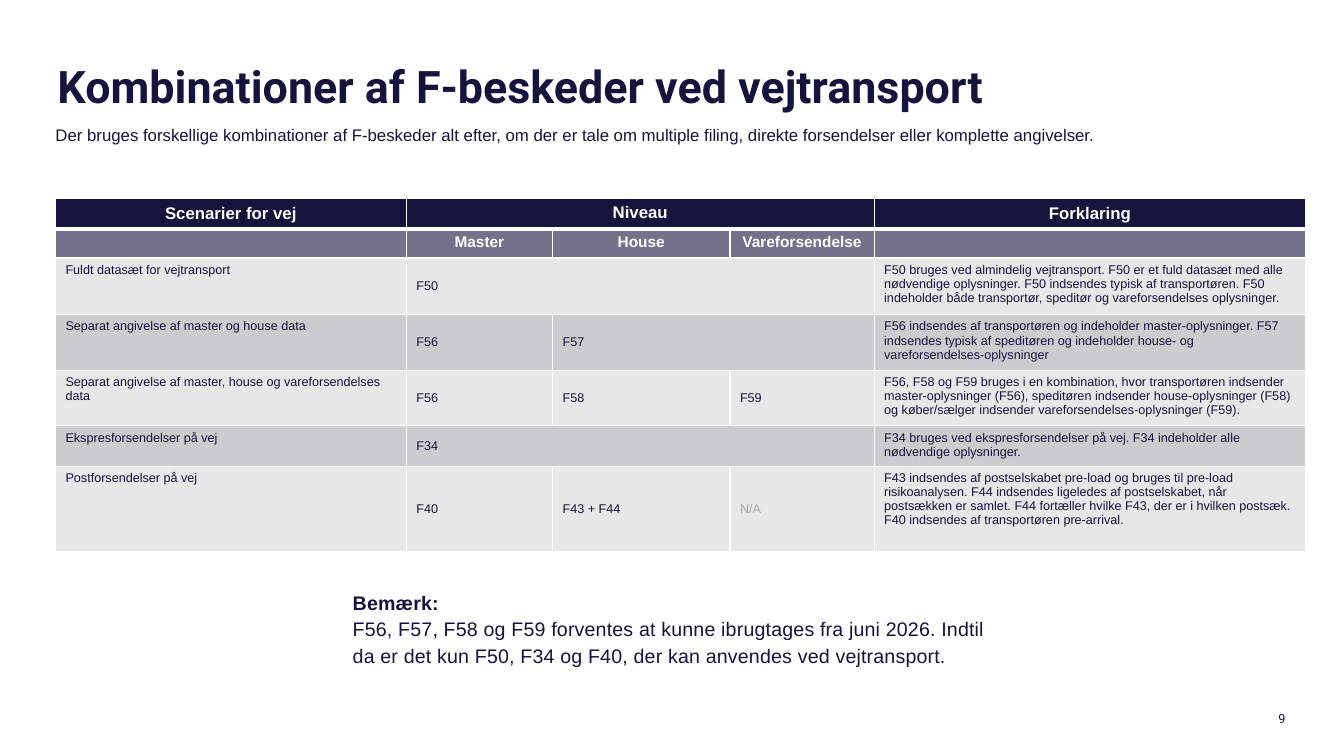
from dataclasses import dataclass

from lxml.etree import SubElement
from pptx import Presentation
from pptx.dml.color import RGBColor
from pptx.enum.text import MSO_ANCHOR, PP_ALIGN
from pptx.oxml import parse_xml
from pptx.oxml.ns import nsdecls, qn
from pptx.util import Inches, Pt

NAVY = RGBColor(0x14, 0x14, 0x3C)
SLATE = RGBColor(0x72, 0x72, 0x8A)
LIGHT = RGBColor(0xE7, 0xE7, 0xE8)
MID = RGBColor(0xCC, 0xCC, 0xCE)
GREY = RGBColor(0xA6, 0xA6, 0xA6)
WHITE = RGBColor(0xFF, 0xFF, 0xFF)

WIDTHS = (3.48, 1.45, 1.76, 1.43, 4.28)
LAST = len(WIDTHS) - 1


@dataclass
class Style:
    size: float
    color: RGBColor = NAVY
    bold: bool = False
    font: str = "Arial"
    align: PP_ALIGN = PP_ALIGN.LEFT
    lines: float = 1.0


@dataclass
class Row:
    """One table row; None continues the cell to its left."""
    height: float
    fill: RGBColor
    cells: tuple


HEAD = Style(12, WHITE, True, align=PP_ALIGN.CENTER)
SUBHEAD = Style(11, WHITE, True, align=PP_ALIGN.CENTER)
BODY = Style(9)
FAINT = Style(9, GREY)

ROWS = (
    Row(0.3, NAVY, ("Scenarier for vej", "Niveau", None, None, "Forklaring")),
    Row(0.29, SLATE, ("", "Master", "House", "Vareforsendelse", "")),
    Row(0.56, LIGHT, (
        "Fuldt datasæt for vejtransport", "F50", None, None,
        "F50 bruges ved almindelig vejtransport. F50 er et fuld datasæt med alle "
        "nødvendige oplysninger. F50 indsendes typisk af transportøren. F50 "
        "indeholder både transportør, speditør og vareforsendelses oplysninger.")),
    Row(0.55, MID, (
        "Separat angivelse af master og house data", "F56", "F57", None,
        "F56 indsendes af transportøren og indeholder master-oplysninger. F57 "
        "indsendes typisk af speditøren og indeholder house- og "
        "vareforsendelses-oplysninger")),
    Row(0.55, LIGHT, (
        "Separat angivelse af master, house og vareforsendelses data",
        "F56", "F58", "F59",
        "F56, F58 og F59 bruges i en kombination, hvor transportøren indsender "
        "master-oplysninger (F56), speditøren indsender house-oplysninger (F58) "
        "og køber/sælger indsender vareforsendelses-oplysninger (F59).")),
    Row(0.4, MID, (
        "Ekspresforsendelser på vej", "F34", None, None,
        "F34 bruges ved ekspresforsendelser på vej. F34 indeholder alle "
        "nødvendige oplysninger.")),
    Row(0.85, LIGHT, (
        "Postforsendelser på vej", "F40", "F43 + F44", "N/A",
        "F43 indsendes af postselskabet pre-load og bruges til pre-load "
        "risikoanalysen. F44 indsendes ligeledes af postselskabet, når "
        "postsækken er samlet. F44 fortæller hvilke F43, der er i hvilken "
        "postsæk. F40 indsendes af transportøren pre-arrival.")),
)


def write(para, text: str, style: Style):
    para.alignment = style.align
    para.line_spacing = style.lines
    run = para.add_run()
    run.text = text
    font = run.font
    font.name, font.size, font.bold = style.font, Pt(style.size), style.bold
    font.color.rgb = style.color
    return run


def place(shape, left: float, top: float, width: float, height: float) -> None:
    shape.left, shape.top = Inches(left), Inches(top)
    shape.width, shape.height = Inches(width), Inches(height)


def set_frame(frame, anchor=MSO_ANCHOR.TOP) -> None:
    """Wrap the text and drop the insets."""
    frame.word_wrap = True
    frame.vertical_anchor = anchor
    frame.margin_left = frame.margin_right = 0
    frame.margin_top = frame.margin_bottom = 0


def add_box(slide, left: float, top: float, width: float, height: float):
    return slide.shapes.add_textbox(
        Inches(left), Inches(top), Inches(width), Inches(height)).text_frame


def set_edges(cell, row: int) -> None:
    """Draw white borders, with a thick rule under the header row."""
    thick = {(0, "lnB"), (1, "lnT")}
    props = cell._tc.get_or_add_tcPr()
    for spot, tag in enumerate(("lnL", "lnR", "lnT", "lnB")):
        width = Pt(3 if (row, tag) in thick else 1)
        props.insert(spot, parse_xml(
            f'<a:{tag} {nsdecls("a")} w="{width}"><a:solidFill>'
            f'<a:srgbClr val="{WHITE}"/></a:solidFill></a:{tag}>'))


def pick_style(row: int, text: str) -> Style:
    if row < 2:
        return (HEAD, SUBHEAD)[row]
    return FAINT if text == "N/A" else BODY


def fill_cell(cell, row: int, col: int, text, fill: RGBColor) -> None:
    cell.fill.solid()
    cell.fill.fore_color.rgb = fill
    set_edges(cell, row)
    para = cell.text_frame.paragraphs[0]
    if not text:
        SubElement(para._p, qn("a:endParaRPr"), sz="900")
        return
    write(para, text, pick_style(row, text))
    outer = col in (0, LAST)
    middle = outer if row == 0 else row > 1 and not outer
    cell.vertical_anchor = MSO_ANCHOR.MIDDLE if middle else MSO_ANCHOR.TOP


def add_grid(slide) -> None:
    table = slide.shapes.add_table(
        len(ROWS), len(WIDTHS), Inches(0.55), Inches(1.97),
        Inches(sum(WIDTHS)), Inches(sum(row.height for row in ROWS))).table
    for column, width in zip(table.columns, WIDTHS):
        column.width = Inches(width)
    for r, row in enumerate(ROWS):
        table.rows[r].height = Inches(row.height)
        for c, text in enumerate(row.cells):
            fill_cell(table.cell(r, c), r, c, text, row.fill)
        if None in row.cells:
            first = row.cells.index(None) - 1
            table.cell(r, first).merge(table.cell(r, LAST - 1))


def add_title(slide) -> None:
    title = slide.shapes.title
    place(title, 0.57, 0.65, 12.2, 0.57)
    set_frame(title.text_frame)
    write(title.text_frame.paragraphs[0],
          "Kombinationer af F-beskeder ved vejtransport",
          Style(32, bold=True, font="Roboto", lines=0.89))


def add_intro(slide) -> None:
    frame = add_box(slide, 0.55, 1.22, 11.05, 0.43)
    set_frame(frame)
    write(frame.paragraphs[0],
          "Der bruges forskellige kombinationer af F-beskeder alt efter, om der "
          "er tale om multiple filing, direkte forsendelser eller komplette "
          "angivelser.", Style(12, lines=1.11))


def add_note(slide) -> None:
    frame = add_box(slide, 3.4, 5.79, 6.54, 1.11)
    frame.word_wrap = True
    label = write(frame.paragraphs[0], "Bemærk:",
                  Style(14, bold=True, lines=1.11))
    note = write(frame.add_paragraph(),
                 "F56, F57, F58 og F59 forventes at kunne ibrugtages fra juni "
                 "2026. Indtil da er det kun F50, F34 og F40, der kan anvendes "
                 "ved vejtransport.", Style(14, lines=1.11))
    for run in (label, note):
        run._r.get_or_add_rPr().set("spc", "10")


def add_number(slide) -> None:
    frame = add_box(slide, 11.05, 7.02, 1.7, 0.18)
    set_frame(frame, MSO_ANCHOR.BOTTOM)
    write(frame.paragraphs[0], "9",
          Style(9, font="Roboto", align=PP_ALIGN.RIGHT))


def main() -> None:
    deck = Presentation()
    deck.slide_width, deck.slide_height = Inches(13.33), Inches(7.5)
    slide = deck.slides.add_slide(deck.slide_layouts[5])
    for draw in (add_number, add_grid, add_title, add_intro, add_note):
        draw(slide)
    deck.save("out.pptx")


if __name__ == "__main__":
    main()
